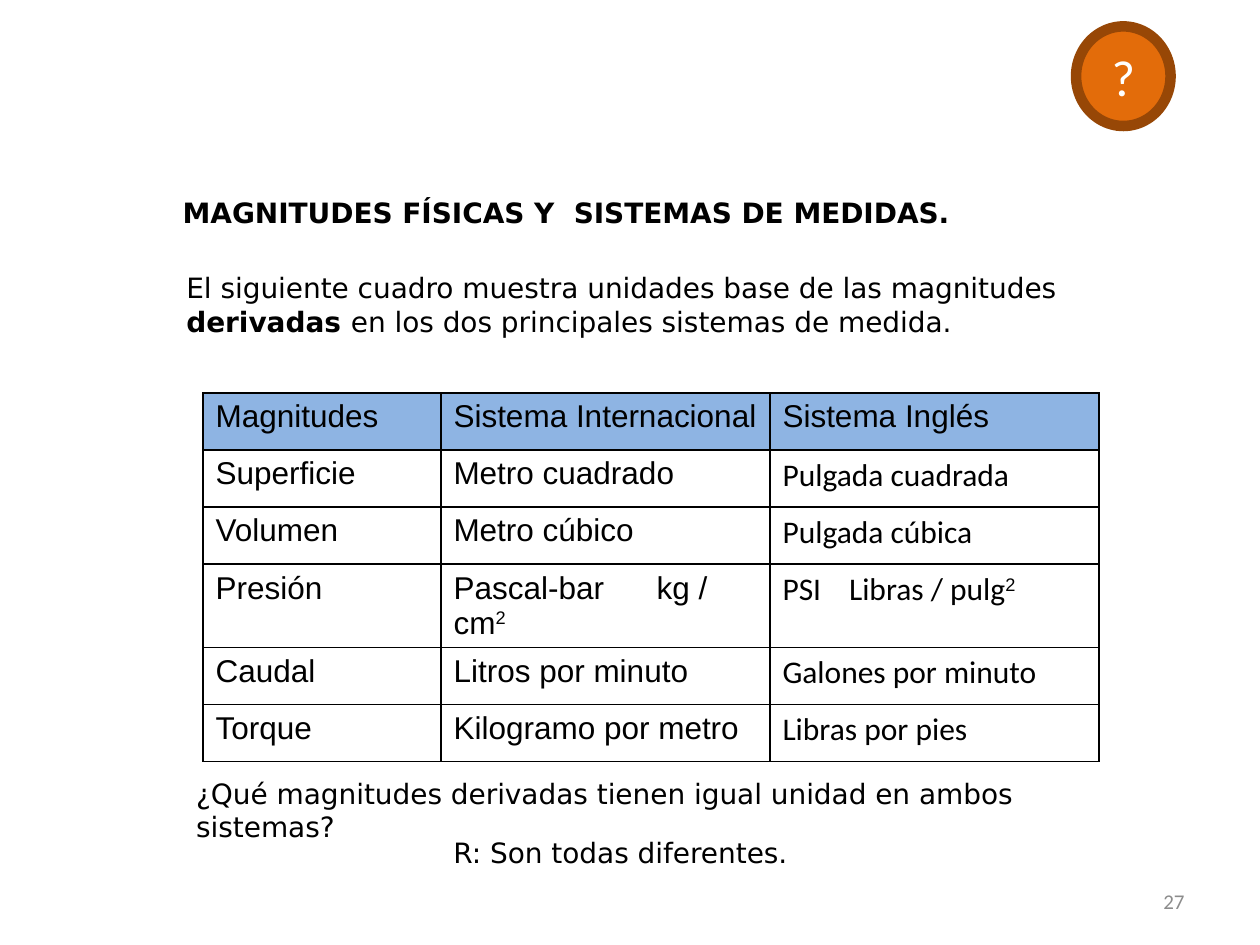
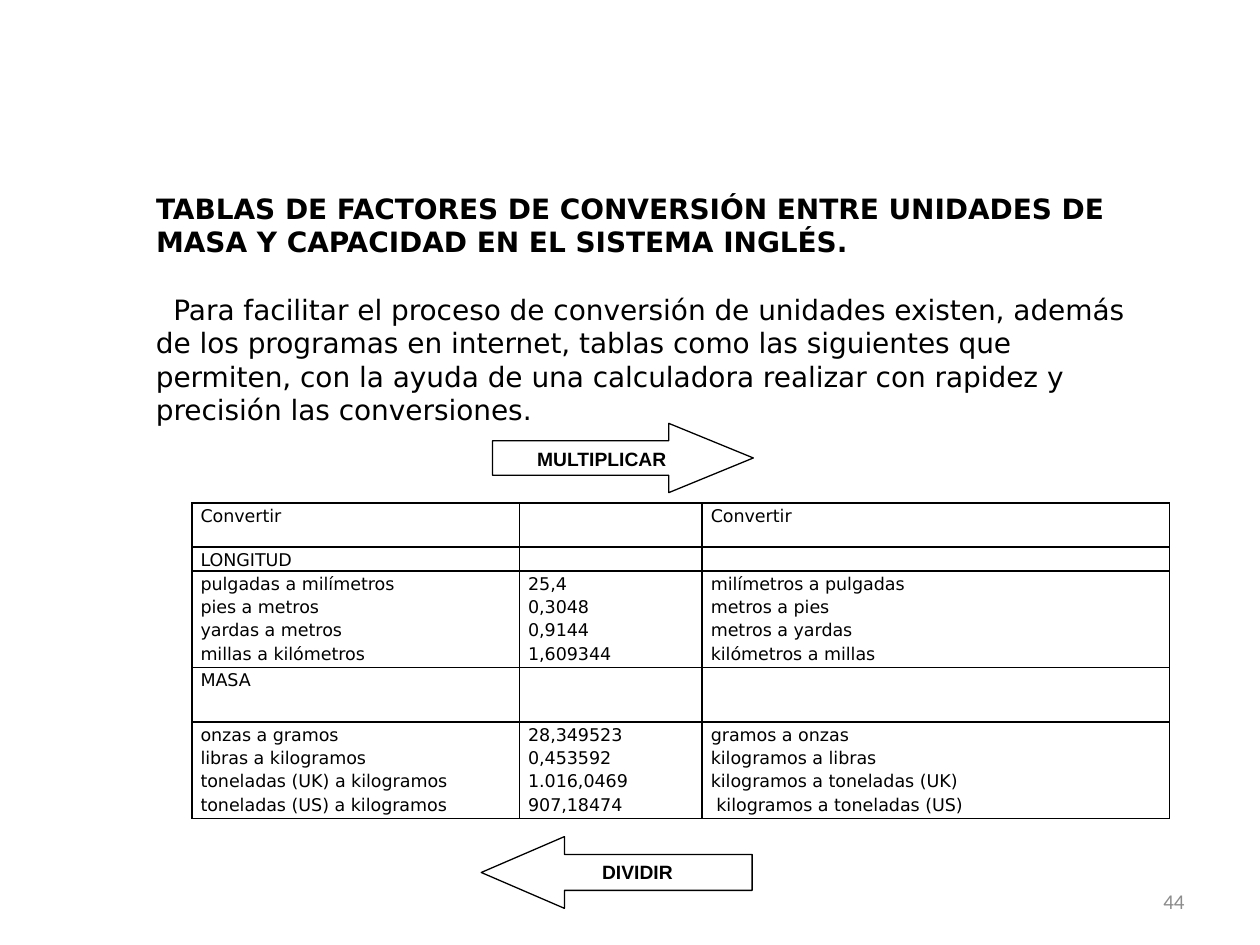
from dataclasses import dataclass, replace
from typing import Optional, Sequence

from lxml import etree
from pptx import Presentation
from pptx.dml.color import RGBColor
from pptx.enum import shapes, text
from pptx.oxml import ns
from pptx.util import Pt

BLACK = RGBColor(0x00, 0x00, 0x00)
WHITE = RGBColor(0xFF, 0xFF, 0xFF)
GRAY = RGBColor(0x8C, 0x8C, 0x8C)
HEADER_BLUE = RGBColor(0x8E, 0xB4, 0xE3)
ORANGE = RGBColor(0xE3, 0x6C, 0x0A)
BROWN = RGBColor(0x97, 0x47, 0x06)

LEFT, CENTER, RIGHT = text.PP_ALIGN.LEFT, text.PP_ALIGN.CENTER, text.PP_ALIGN.RIGHT
TOP, MIDDLE = text.MSO_ANCHOR.TOP, text.MSO_ANCHOR.MIDDLE


@dataclass(frozen=True)
class Box:
    left: float
    top: float
    width: float
    height: float

    def lengths(self) -> tuple:
        return Pt(self.left), Pt(self.top), Pt(self.width), Pt(self.height)


@dataclass(frozen=True)
class Style:
    font: str = "DejaVu Sans"
    size: float = 16
    bold: bool = False
    color: RGBColor = BLACK
    align: text.PP_ALIGN = LEFT
    line_spacing: Optional[float] = None
    first_indent: float = 0
    tab: float = 0


@dataclass(frozen=True)
class Span:
    text: str
    bold: bool = False
    superscript: bool = False
    font: Optional[str] = None


@dataclass(frozen=True)
class Cell:
    lines: Sequence[Sequence[Span]]
    style: Style
    fill: Optional[RGBColor] = None


@dataclass(frozen=True)
class Grid:
    box: Box
    columns: Sequence[float]
    rows: Sequence[float]
    margins: tuple  # horizontal, vertical


BODY = Style()
TITLE = Style(bold=True)
NUMBER = Style("Calibri", 12, color=GRAY, align=RIGHT)
QUESTION_MARK = Style("Calibri", 29, color=WHITE, align=CENTER)
ARROW_LABEL = Style("Arial", 11, bold=True, align=CENTER)
UNIT = Style("Arial", 18)
FACTOR = Style(size=10, line_spacing=1.15)

NUMBER_BOX = Box(516.2, 500.4, 167.8, 28.8)


# Text
def write(frame, lines: Sequence[Sequence[Span]], style: Style) -> None:
    for index, spans in enumerate(lines):
        paragraph = frame.add_paragraph() if index else frame.paragraphs[0]
        paragraph.alignment = style.align
        if style.line_spacing:
            paragraph.line_spacing = style.line_spacing
        properties = paragraph._p.get_or_add_pPr()
        if style.first_indent:
            properties.set("indent", str(Pt(style.first_indent)))
        if style.tab:
            tabs = etree.SubElement(properties, ns.qn("a:tabLst"))
            etree.SubElement(tabs, ns.qn("a:tab"), pos=str(Pt(style.tab)), algn="l")
        for span in spans:
            run = paragraph.add_run()
            run.text = span.text
            run.font.name = span.font or style.font
            run.font.size = Pt(style.size)
            run.font.bold = style.bold or span.bold
            run.font.color.rgb = style.color
            if span.superscript:
                run.font._element.set("baseline", "30000")
        if not spans:
            etree.SubElement(paragraph._p, ns.qn("a:endParaRPr"), sz=str(int(style.size * 100)))


def plain(content: str) -> list[list[Span]]:
    """Turn each line of content into a paragraph with at most one run."""
    return [[Span(line)] if line else [] for line in content.split("\n")]


def set_frame(frame, anchor: text.MSO_ANCHOR) -> None:
    frame.word_wrap = True
    frame.auto_size = text.MSO_AUTO_SIZE.NONE
    frame.vertical_anchor = anchor


def add_text(slide, box: Box, lines: Sequence[Sequence[Span]], style: Style = BODY,
             anchor: text.MSO_ANCHOR = TOP) -> None:
    frame = slide.shapes.add_textbox(*box.lengths()).text_frame
    set_frame(frame, anchor)
    write(frame, lines, style)


# Shapes
def add_labelled_shape(slide, kind: shapes.MSO_SHAPE, box: Box, label: str, style: Style,
                       fill: RGBColor, line: RGBColor, line_width: float,
                       anchor: text.MSO_ANCHOR = TOP,
                       adjustments: Sequence[float] = ()) -> None:
    shape = slide.shapes.add_shape(kind, *box.lengths())
    shape.shadow.inherit = False
    shape.fill.solid()
    shape.fill.fore_color.rgb = fill
    shape.line.color.rgb = line
    shape.line.width = Pt(line_width)
    for index, value in enumerate(adjustments):
        shape.adjustments[index] = value
    set_frame(shape.text_frame, anchor)
    write(shape.text_frame, plain(label), style)


def add_arrow(slide, kind: shapes.MSO_SHAPE, box: Box, label: str, head: float) -> None:
    add_labelled_shape(slide, kind, box, label, ARROW_LABEL, WHITE, BLACK, 0.75,
                       adjustments=(0.5, head))


# Tables
def set_borders(cell) -> None:
    properties = cell._tc.get_or_add_tcPr()
    for index, side in enumerate(("lnL", "lnR", "lnT", "lnB")):
        border = etree.Element(ns.qn(f"a:{side}"), w=str(Pt(1)))
        fill = etree.SubElement(border, ns.qn("a:solidFill"))
        etree.SubElement(fill, ns.qn("a:srgbClr"), val=str(BLACK))
        properties.insert(index, border)


def add_grid(slide, grid: Grid, contents: Sequence[Sequence[Cell]]) -> None:
    table = slide.shapes.add_table(len(grid.rows), len(grid.columns), *grid.box.lengths()).table
    table.first_row = table.horz_banding = False
    for column, width in zip(table.columns, grid.columns):
        column.width = Pt(width)
    for row, height, row_contents in zip(table.rows, grid.rows, contents):
        row.height = Pt(height)
        for cell, content in zip(row.cells, row_contents):
            cell.margin_left = cell.margin_right = Pt(grid.margins[0])
            cell.margin_top = cell.margin_bottom = Pt(grid.margins[1])
            if content.fill:
                cell.fill.solid()
                cell.fill.fore_color.rgb = content.fill
            else:
                cell.fill.background()
            set_borders(cell)
            write(cell.text_frame, content.lines, content.style)


# Shared slide frame
def add_slide(presentation, title: str, title_box: Box, number: str):
    slide = presentation.slides.add_slide(presentation.slide_layouts.get_by_name("Title Only"))
    heading = slide.shapes.title
    heading.left, heading.top, heading.width, heading.height = title_box.lengths()
    set_frame(heading.text_frame, TOP)
    write(heading.text_frame, plain(title), TITLE)
    add_text(slide, NUMBER_BOX, plain(number), NUMBER, MIDDLE)
    return slide


# Slide: derived magnitudes
MAGNITUDES_GRID = Grid(Box(116, 224.6, 512, 196), (136, 188, 188), (32.6,) * 6, (7.2, 3.6))
MAGNITUDES_HEADER = ("Magnitudes", "Sistema Internacional", "Sistema Inglés")
SQUARED = Span("2", superscript=True, font="Arial")
MAGNITUDES = (
    ("Superficie", "Metro cuadrado", "Pulgada cuadrada"),
    ("Volumen", "Metro cúbico", "Pulgada cúbica"),
    ("Presión", "Pascal-bar\tkg / cm", "PSI\tLibras / pulg"),
    ("Caudal", "Litros por minuto", "Galones por minuto"),
    ("Torque", "Kilogramo por metro", "Libras por pies"),
)
MAGNITUDE_STYLES = (UNIT, replace(UNIT, tab=116), replace(UNIT, font="Calibri", tab=38))


def magnitude_cell(content: str, style: Style) -> Cell:
    spans = [Span(content)]
    if "\t" in content:
        spans.append(SQUARED)
    else:
        style = replace(style, tab=0)
    return Cell([spans], style)


def build_magnitudes(presentation) -> None:
    slide = add_slide(presentation, "MAGNITUDES FÍSICAS Y  SISTEMAS DE MEDIDAS.",
                      Box(97.2, 108, 561.6, 30), "27")
    header = [Cell(plain(name), UNIT, HEADER_BLUE) for name in MAGNITUDES_HEADER]
    body = [[magnitude_cell(*pair) for pair in zip(row, MAGNITUDE_STYLES)] for row in MAGNITUDES]
    add_grid(slide, MAGNITUDES_GRID, [header, *body])
    add_text(slide, Box(99.4, 151.2, 564.5, 45.4), [[
        Span("El siguiente cuadro muestra unidades base de las magnitudes "),
        Span("derivadas ", bold=True),
        Span("en los dos principales sistemas de medida."),
    ]])
    add_text(slide, Box(105, 440, 565, 46),
             plain("¿Qué magnitudes derivadas tienen igual unidad en ambos sistemas?"))
    add_labelled_shape(slide, shapes.MSO_SHAPE.OVAL, Box(614.9, 15.1, 54, 56.9), "?",
                       QUESTION_MARK, ORANGE, BROWN, 6, MIDDLE)
    add_text(slide, Box(252, 473.8, 289.4, 26.6), plain("R: Son todas diferentes."))


# Slide: conversion factors
FACTORS_GRID = Grid(Box(109.6, 287.4, 558.7, 180.6), (187.2, 104.4, 267.1),
                    (25.1, 13.7, 55.4, 30.9, 55.4), (5, 0))
FACTORS = (
    ("Convertir", "", "Convertir"),
    ("LONGITUD", "", ""),
    ("pulgadas a milímetros\npies a metros\nyardas a metros\nmillas a kilómetros",
     "25,4\n0,3048\n0,9144\n1,609344",
     "milímetros a pulgadas\nmetros a pies\nmetros a yardas\nkilómetros a millas"),
    ("MASA", "", ""),
    ("onzas a gramos\nlibras a kilogramos\n"
     "toneladas (UK) a kilogramos\ntoneladas (US) a kilogramos",
     "28,349523\n0,453592\n1.016,0469\n907,18474",
     "gramos a onzas\nkilogramos a libras\n"
     "kilogramos a toneladas (UK)\n kilogramos a toneladas (US)"),
)


def build_factors(presentation) -> None:
    slide = add_slide(
        presentation,
        "TABLAS DE FACTORES DE CONVERSIÓN ENTRE UNIDADES DE MASA Y CAPACIDAD "
        "EN EL SISTEMA INGLÉS.",
        Box(82, 105.8, 580.4, 46), "44")
    add_grid(slide, FACTORS_GRID,
             [[Cell(plain(content), FACTOR) for content in row] for row in FACTORS])
    add_arrow(slide, shapes.MSO_SHAPE.RIGHT_ARROW, Box(281.5, 241.9, 149, 39.6),
              "MULTIPLICAR", 1.22)
    add_arrow(slide, shapes.MSO_SHAPE.LEFT_ARROW, Box(275, 478.1, 154.8, 41),
              "DIVIDIR", 1.16)
    add_text(slide, Box(82, 163.4, 580.4, 85.7), plain(
        "Para facilitar el proceso de conversión de unidades existen, además de los "
        "programas en internet, tablas como las siguientes que permiten, con la ayuda de "
        "una calculadora realizar con rapidez y precisión las conversiones."),
        replace(BODY, first_indent=10))


def main() -> None:
    presentation = Presentation()
    presentation.slide_width, presentation.slide_height = Pt(720), Pt(540)
    build_magnitudes(presentation)
    build_factors(presentation)
    presentation.save("out.pptx")


if __name__ == "__main__":
    main()
